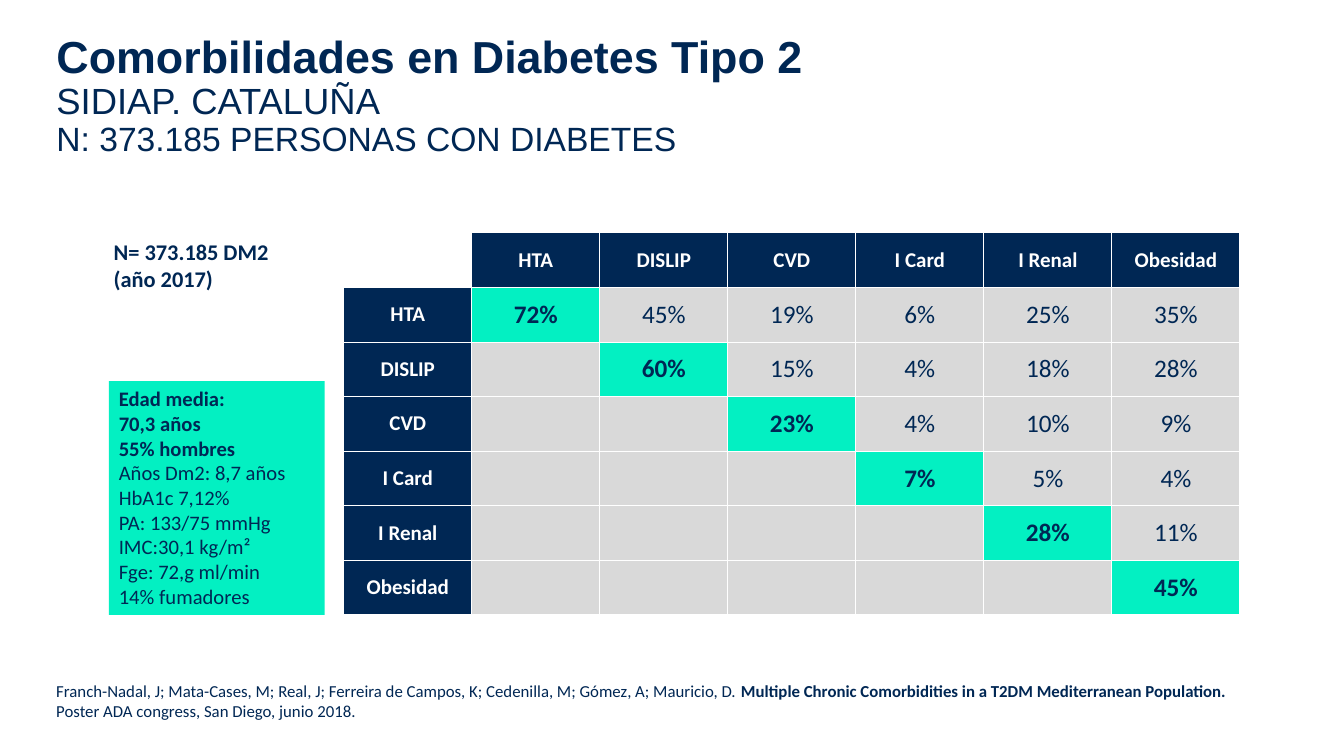
import pptx
import pptx.util
import pptx.dml.color
import pptx.enum.shapes
import pptx.enum.text
import pptx.oxml
import pptx.oxml.ns

Inches = pptx.util.Inches
Pt = pptx.util.Pt
Align = pptx.enum.text.PP_ALIGN
Anchor = pptx.enum.text.MSO_ANCHOR
AutoSize = pptx.enum.text.MSO_AUTO_SIZE

COLORS = {"navy": "002754", "mint": "03F0C2", "grey": "D9D9D9", "white": "FFFFFF"}


def rgb(name):
    return pptx.dml.color.RGBColor.from_string(COLORS[name])


def style(font, size, bold=False, color="navy", face="Calibri"):
    font.name = face
    font.size = Pt(size)
    font.bold = bold
    font.color.rgb = rgb(color)


presentation = pptx.Presentation()
presentation.slide_width = Inches(13.33)
presentation.slide_height = Inches(7.5)
slide = presentation.slides.add_slide(presentation.slide_layouts[5])

heading = slide.shapes.title
heading.left, heading.top = Inches(0.46), Inches(0.29)
heading.width, heading.height = Inches(10.13), Inches(1.45)
heading.text_frame.text = (
    "Comorbilidades en Diabetes Tipo 2\nSIDIAP. CATALUÑA\nN: 373.185 PERSONAS CON DIABETES"
)
heading.text_frame.auto_size = AutoSize.NONE
heading.text_frame.vertical_anchor = Anchor.TOP
for paragraph, size in zip(heading.text_frame.paragraphs, (32, 26, 24)):
    paragraph.alignment = Align.LEFT
    paragraph.line_spacing = 0.9
    paragraph.space_before = Pt(0)
    style(paragraph.font, size, bold=size == 32, face="Arial")

conditions = ["HTA", "DISLIP", "CVD", "I Card", "I Renal", "Obesidad"]
prevalence = [
    [72, 45, 19, 6, 25, 35],
    [60, 15, 4, 18, 28],
    [23, 4, 10, 9],
    [7, 5, 4],
    [28, 11],
    [45],
]
side = len(conditions) + 1
matrix = slide.shapes.add_table(
    side, side, Inches(3.41), Inches(2.31), Inches(8.89), Inches(3.79)
).table
for column in matrix.columns:
    column.width = Inches(1.27)
for row in matrix.rows:
    row.height = Inches(3.79 / side)

for r in range(side):
    for c in range(side):
        cell = matrix.cell(r, c)
        label, size, bold, ink, fill = "", 18, False, "navy", "grey"
        if r == 0 or c == 0:
            label = conditions[max(r, c) - 1] if r != c else ""
            size, bold, ink, fill = 15, True, "white", "navy"
        elif c >= r:
            label = f"{prevalence[r - 1][c - r]}%"
            if c == r:
                bold, fill = True, "mint"
        cell.text = label
        cell.vertical_anchor = Anchor.MIDDLE
        cell.margin_left = cell.margin_right = Inches(0.13)
        cell.margin_top = cell.margin_bottom = Inches(0.07)
        cell.text_frame.paragraphs[0].alignment = Align.CENTER
        style(cell.text_frame.paragraphs[0].font, size, bold, ink)
        if r == c == 0:
            cell.fill.background()
        else:
            cell.fill.solid()
            cell.fill.fore_color.rgb = rgb(fill)
        for position, edge in enumerate(("lnL", "lnR", "lnT", "lnB")):
            border = pptx.oxml.parse_xml(
                f'<a:{edge} {pptx.oxml.ns.nsdecls("a")} w="{Pt(0.75)}"><a:solidFill>'
                f'<a:srgbClr val="{COLORS["white"]}"/></a:solidFill></a:{edge}>'
            )
            cell._tc.get_or_add_tcPr().insert(position, border)

sample = slide.shapes.add_textbox(Inches(1.03), Inches(2.31), Inches(1.76), Inches(0.64))
sample.text_frame.text = "N= 373.185 DM2\n(año 2017)"
sample.text_frame.word_wrap = False
for paragraph in sample.text_frame.paragraphs:
    style(paragraph.font, 16, bold=True)

profile = slide.shapes.add_shape(
    pptx.enum.shapes.MSO_SHAPE.RECTANGLE, Inches(1.08), Inches(3.78), Inches(2.14), Inches(2.32)
)
profile.shadow.inherit = False
profile.fill.solid()
profile.fill.fore_color.rgb = rgb("mint")
profile.line.fill.background()
profile.text_frame.word_wrap = True
profile.text_frame.vertical_anchor = Anchor.TOP
profile.text_frame.text = (
    "Edad media:\v70,3 años\n55% hombres\nAños Dm2: 8,7 años\nHbA1c 7,12%\n"
    "PA: 133/75 mmHg\vIMC:30,1 kg/m²\vFge: 72,g ml/min\n14% fumadores"
)
for index, paragraph in enumerate(profile.text_frame.paragraphs):
    paragraph.alignment = Align.LEFT
    style(paragraph.font, 14.7, bold=index < 2)

citation = slide.shapes.add_textbox(Inches(0.46), Inches(6.7), Inches(12.43), Inches(0.5))
citation.text_frame.word_wrap = True
citation.text_frame.vertical_anchor = Anchor.BOTTOM
reference = citation.text_frame.paragraphs[0]
authors = reference.add_run()
authors.text = (
    "Franch-Nadal, J; Mata-Cases, M; Real, J; Ferreira de Campos, K; "
    "Cedenilla, M; Gómez, A; Mauricio, D. "
)
work = reference.add_run()
work.text = "Multiple Chronic Comorbidities in a T2DM Mediterranean Population."
reference.add_line_break()
venue = reference.add_run()
venue.text = "Poster ADA congress, San Diego, junio 2018."
style(reference.font, 12)
work.font.bold = True

presentation.save("out.pptx")
